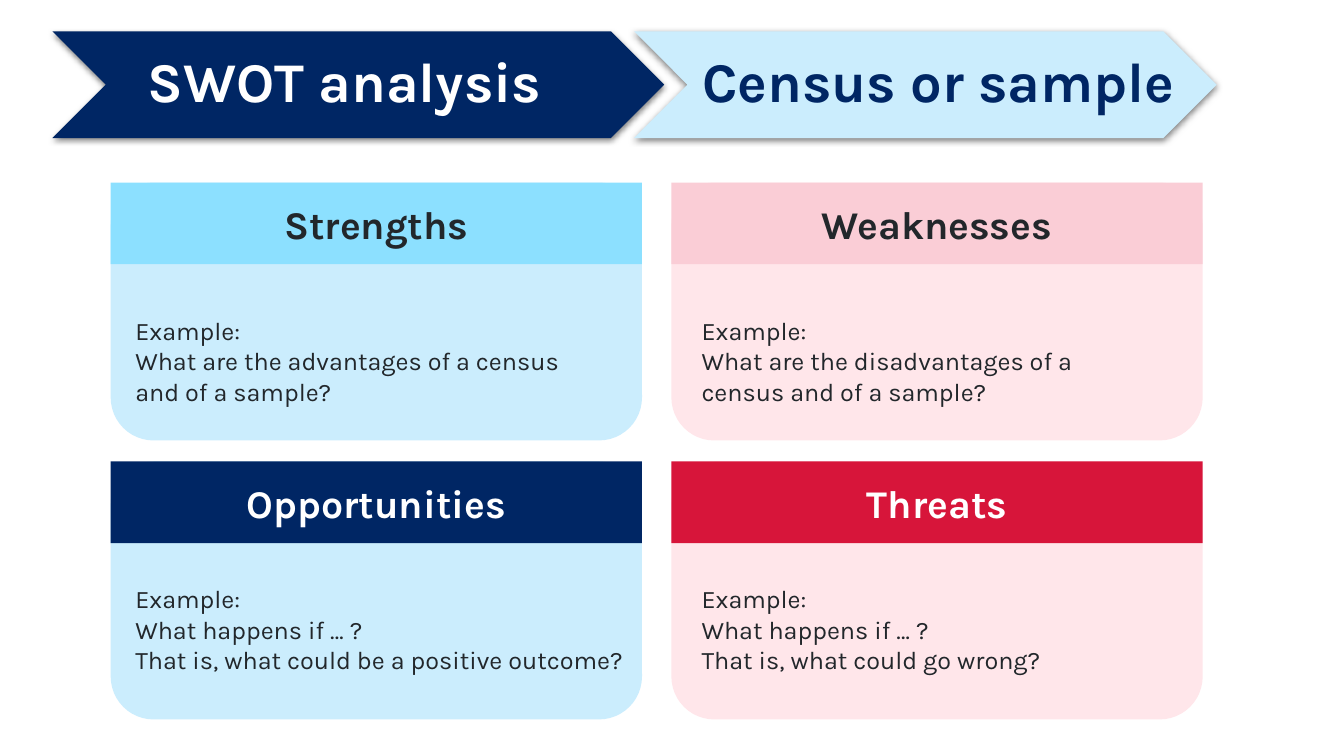
from lxml import etree
from pptx import Presentation
from pptx.dml.color import RGBColor
from pptx.enum.shapes import MSO_SHAPE
from pptx.enum.text import MSO_ANCHOR, PP_ALIGN
from pptx.oxml import parse_xml
from pptx.oxml.ns import nsdecls, qn
from pptx.util import Cm, Pt

CHEVRON = MSO_SHAPE.CHEVRON
RECT = MSO_SHAPE.RECTANGLE
ROUNDED = MSO_SHAPE.ROUNDED_RECTANGLE
CENTER = PP_ALIGN.CENTER
MIDDLE = MSO_ANCHOR.MIDDLE
TOP = MSO_ANCHOR.TOP

FONT = "Karla"
NAVY, RED, WHITE, INK = "002664", "D7153A", "FFFFFF", "22272B"
SKY, PALE_BLUE = "8CE0FF", "CBEDFD"
PINK, PALE_PINK = "FACDD6", "FFE6EA"

# Card grid, in cm
CARD_W, CARD_H, HEADER_H = 13.39, 6.5, 2.06
CARD_LEFTS = (2.79, 16.92)
CARD_TOPS = (4.6, 11.63)
BODY_INDENTS = (0.62, 0.76)
BODY_TOPS = (7.95, 14.71)
BODY_H = 2.39

# Row, column, heading, heading fill, heading colour, card fill, body width, lines
CARDS = [
    (0, 0, "Strengths", SKY, INK, PALE_BLUE, 11.15,
     ["Example:", "What are the advantages of a census and of a sample?"]),
    (0, 1, "Weaknesses", PINK, INK, PALE_PINK, 11.46,
     ["Example:", "What are the disadvantages of a census and of a sample?"]),
    (1, 0, "Opportunities", NAVY, WHITE, PALE_BLUE, 13.06,
     ["Example:", "What happens if … ?",
      "That is, what could be a positive outcome?"]),
    (1, 1, "Threats", RED, WHITE, PALE_PINK, 12.09,
     ["Example:", "What happens if … ?", "That is, what could go wrong?"]),
]


def rgb(color):
    return RGBColor.from_string(color)


def add_block(s, kind, x, y, w, h, fill):
    sp = s.shapes.add_shape(kind, Cm(x), Cm(y), Cm(w), Cm(h))
    sp.shadow.inherit = False
    sp.fill.solid()
    sp.fill.fore_color.rgb = rgb(fill)
    sp.line.fill.background()
    return sp


def add_drop_shadow(sp):
    effects = sp._element.spPr.find(qn("a:effectLst"))
    shadow = parse_xml(
        f'<a:outerShdw {nsdecls("a")} blurRad="{Pt(4.5)}" dist="{Pt(1.5)}" '
        'dir="5400000" algn="t" rotWithShape="0"/>')
    black = etree.SubElement(shadow, qn("a:srgbClr"), val="000000")
    etree.SubElement(black, qn("a:alpha"), val="50000")
    effects.append(shadow)


def write(sp, lines, size, color, bold=False, align=None, anchor=TOP,
          inset=None, spacing=None):
    """Fill a shape with one paragraph per line; inset is in cm."""
    tf = sp.text_frame
    tf.word_wrap = True
    tf.vertical_anchor = anchor
    if inset is not None:
        tf.margin_left = tf.margin_right = Cm(inset)
        tf.margin_top = tf.margin_bottom = Cm(inset)
    for i, line in enumerate(lines):
        p = tf.add_paragraph() if i else tf.paragraphs[0]
        p.alignment = align
        p.line_spacing = spacing
        r = p.add_run()
        r.text = line
        r.font.name = FONT
        r.font.size = Pt(size)
        r.font.bold = bold
        r.font.color.rgb = rgb(color)


def add_text(s, x, y, w, h, lines, size, color, **style):
    sp = s.shapes.add_textbox(Cm(x), Cm(y), Cm(w), Cm(h))
    write(sp, lines, size, color, **style)


def add_banner(s, x, w, fill):
    add_drop_shadow(add_block(s, CHEVRON, x, 0.79, w, 2.69, fill))


def add_banner_title(s, x, w, text, color):
    add_text(s, x, 1.24, w, 1.5, [text], 40, color, bold=True, spacing=0.9)


def add_card(s, row, col, heading, head_fill, head_color, fill, body_w, lines):
    x, y = CARD_LEFTS[col], CARD_TOPS[row]
    add_block(s, ROUNDED, x, y, CARD_W, CARD_H, fill)
    header = add_block(s, RECT, x, y, CARD_W, HEADER_H, head_fill)
    write(header, [heading], 28, head_color, bold=True, align=CENTER,
          anchor=MIDDLE, inset=0.33)
    add_text(s, x + BODY_INDENTS[col], BODY_TOPS[row], body_w, BODY_H, lines,
             18, INK, inset=0)


def main():
    prs = Presentation()
    prs.slide_width, prs.slide_height = Cm(33.87), Cm(19.05)
    s = prs.slides.add_slide(prs.slide_layouts[6])
    add_banner(s, 15.98, 14.68, PALE_BLUE)
    add_banner(s, 1.32, 15.42, NAVY)
    add_banner_title(s, 3.48, 12.75, "SWOT analysis", WHITE)
    add_banner_title(s, 17.45, 12.6, "Census or sample", NAVY)
    for card in CARDS:
        add_card(s, *card)
    prs.save("out.pptx")


if __name__ == "__main__":
    main()
